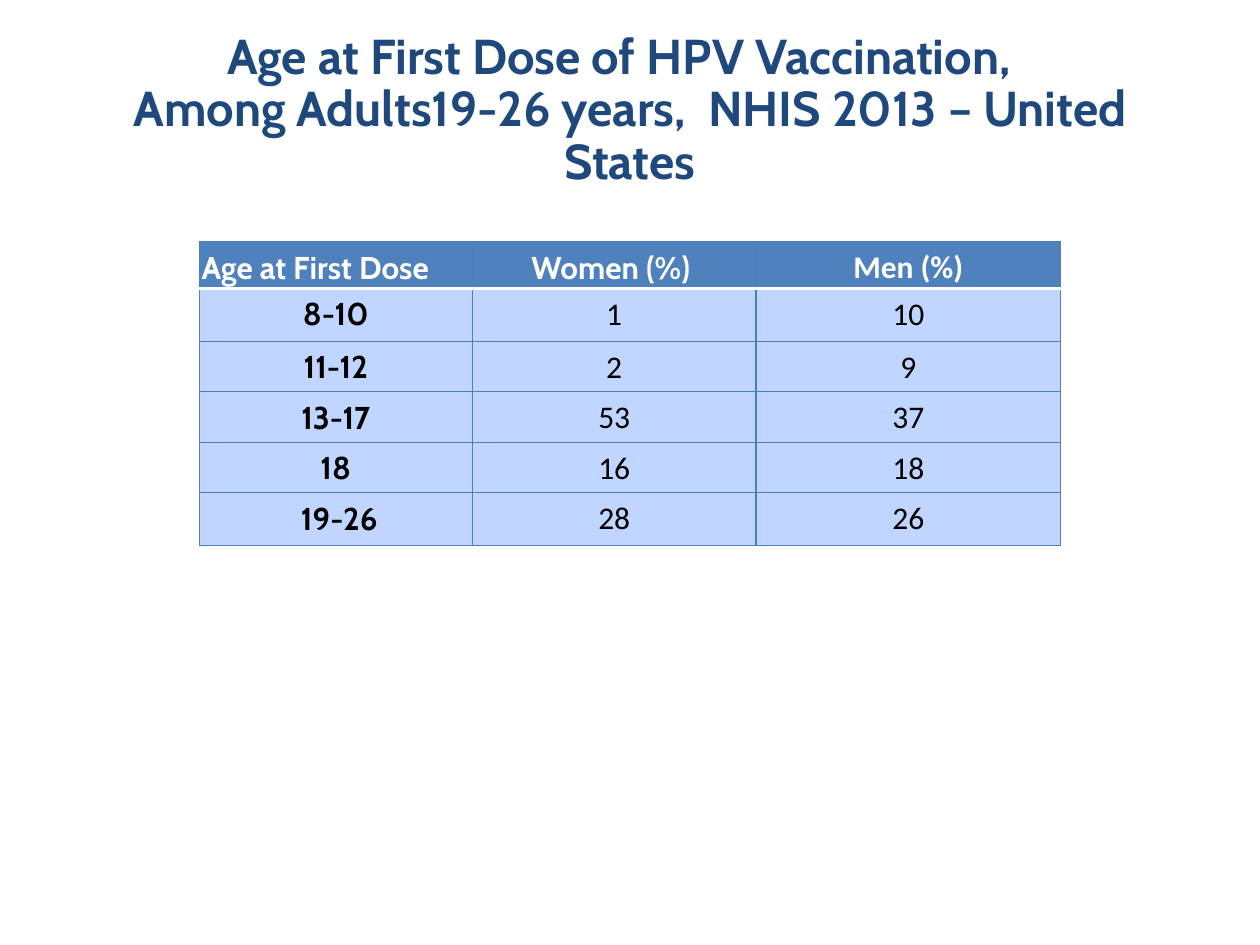
import pptx
import pptx.dml.color
import pptx.enum.text
import pptx.oxml
import pptx.oxml.ns
import pptx.util

Pt = pptx.util.Pt
Inches = pptx.util.Inches
RGBColor = pptx.dml.color.RGBColor
PP_ALIGN = pptx.enum.text.PP_ALIGN
ANCHOR = pptx.enum.text.MSO_ANCHOR

NAVY = RGBColor(0x1F, 0x49, 0x7D)
HEADER = RGBColor(0x4F, 0x81, 0xBD)
BODY = RGBColor(0xC0, 0xD5, 0xFF)
BORDER = RGBColor(0x4B, 0x7E, 0xBC)
WHITE = RGBColor(0xFF, 0xFF, 0xFF)
BLACK = RGBColor(0, 0, 0)


def write(tf, text, size=18, font="Cabin", color=BLACK, bold=True,
          align=PP_ALIGN.CENTER, spacing=1.15, after=10):
    p = tf.paragraphs[0]
    p.text = text
    p.alignment = align
    p.line_spacing = spacing
    p.space_after = Pt(after)
    for r in p.runs:
        r.font.size = Pt(size)
        r.font.name = font
        r.font.bold = bold
        r.font.color.rgb = color


def set_border(cell, side, color, width):
    """Draw one side (L, R, T or B); call in that order, before the fill."""
    ln = pptx.oxml.parse_xml(
        f'<a:ln{side} {pptx.oxml.ns.nsdecls("a")} w="{Pt(width)}">'
        f'<a:solidFill><a:srgbClr val="{color}"/></a:solidFill></a:ln{side}>')
    cell._tc.get_or_add_tcPr().append(ln)


prs = pptx.Presentation()
prs.slide_width, prs.slide_height = Inches(10), Inches(7.5)
s = prs.slides.add_slide(prs.slide_layouts[6])
W, H = prs.slide_width, prs.slide_height

title = s.shapes.add_textbox(int(W * 0.05), int(H * 0.04), int(W * 0.9), Inches(1.25))
tf = title.text_frame
tf.word_wrap = True
tf.vertical_anchor = ANCHOR.BOTTOM
write(tf, "Age at First Dose of HPV Vaccination,  \v"
      "Among Adults19-26 years,  NHIS 2013 – United States",
      size=28, color=NAVY, spacing=Pt(30), after=0)

rows = [
    ("Age at First Dose", "Women (%) ", "Men (%)"),
    ("8-10", "1", "10"),
    ("11-12", "2", "9"),
    ("13-17", "53", "37"),
    ("18", "16", "18"),
    (" 19-26", "28", "26"),
]
col_widths = [2.17, 2.25, 2.42]
row_heights = [0.37, 0.42, 0.4, 0.4, 0.4, 0.42]

frame = s.shapes.add_table(len(rows), len(col_widths), Inches(1.58), Inches(1.92),
                           Inches(sum(col_widths)), Inches(sum(row_heights)))
table = frame.table
table.horz_banding = False
for column, width in zip(table.columns, col_widths):
    column.width = Inches(width)

for i, values in enumerate(rows):
    table.rows[i].height = Inches(row_heights[i])
    is_header = i == 0
    for j, value in enumerate(values):
        cell = table.cell(i, j)
        cell.margin_left = cell.margin_right = Inches(0.02)
        cell.margin_top = cell.margin_bottom = Inches(0.01)
        for side in "LRTB":
            under_header = (i, side) in ((0, "B"), (1, "T"))
            set_border(cell, side, *((WHITE, 2) if under_header else (BORDER, 0.75)))
        cell.fill.solid()
        cell.fill.fore_color.rgb = HEADER if is_header else BODY
        plain = j == 2 if is_header else j > 0
        write(cell.text_frame, value,
              font="Calibri" if plain else "Cabin",
              color=WHITE if is_header else BLACK,
              bold=is_header or j == 0,
              align=PP_ALIGN.LEFT if is_header and j == 0 else PP_ALIGN.CENTER)

prs.save("out.pptx")
